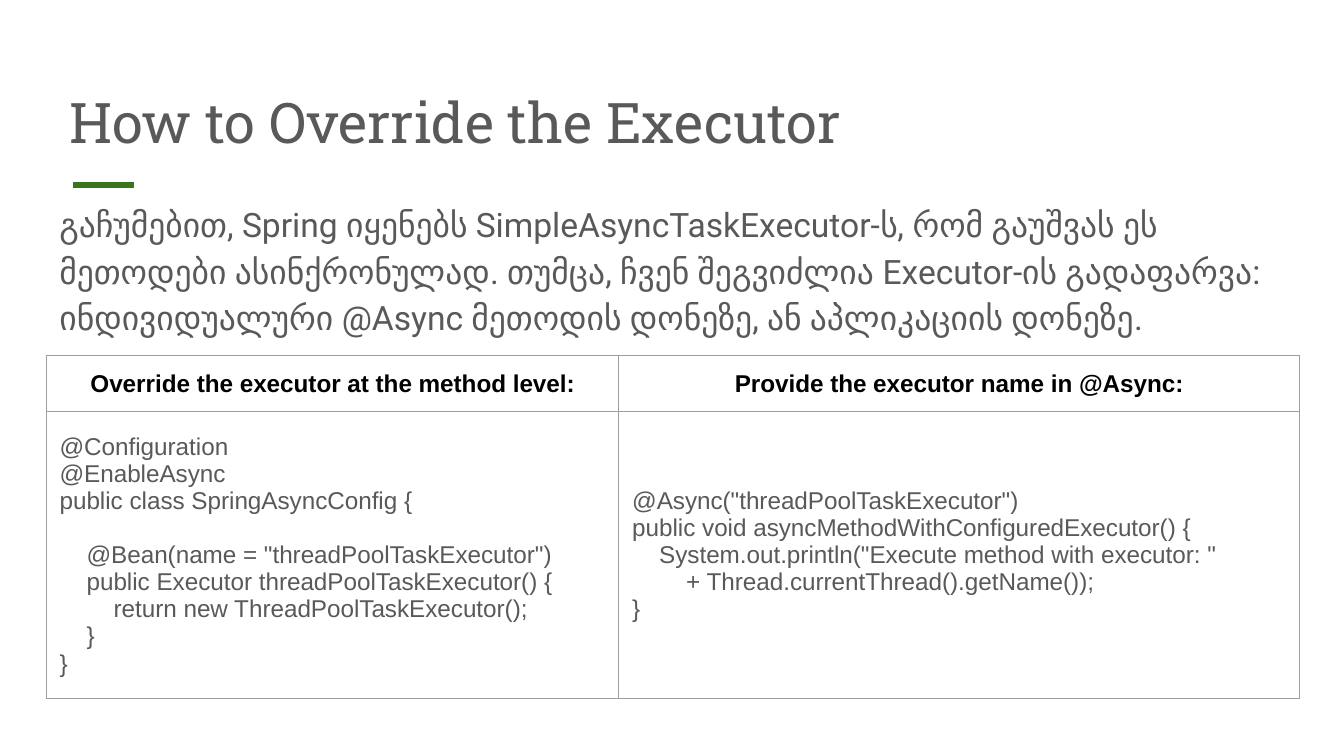
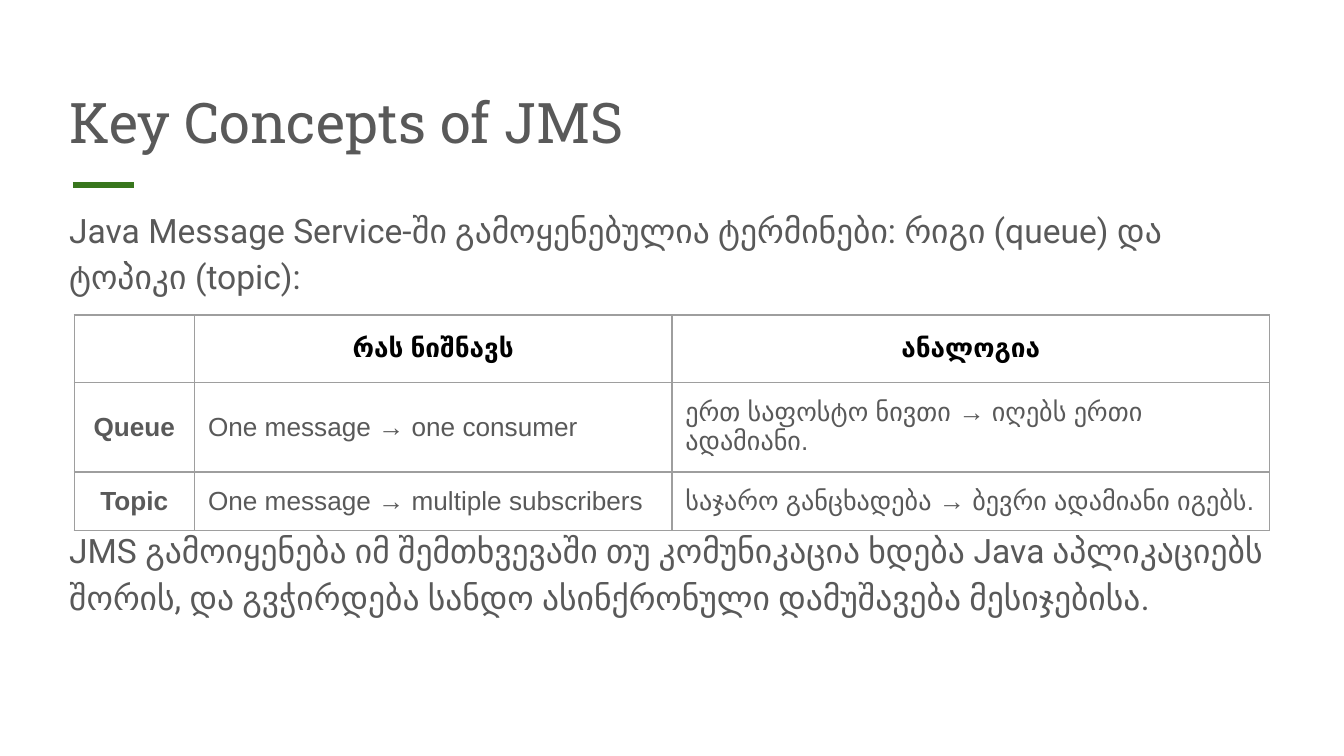
import pptx
import pptx.dml.color
import pptx.enum.shapes
import pptx.enum.text
import pptx.oxml
import pptx.oxml.ns
import pptx.util
import lxml.etree

PX = 9525  # 96 px to the inch
INSET = pptx.util.Inches(0.1)
GREY, BLACK, GREEN, BORDER = "595959", "000000", "38761D", "9E9E9E"
MIDDLE = pptx.enum.text.MSO_ANCHOR.MIDDLE
CENTER = pptx.enum.text.PP_ALIGN.CENTER
LEFT = pptx.enum.text.PP_ALIGN.LEFT


def rgb(value):
    return pptx.dml.color.RGBColor.from_string(value)


def write(frame, lines, font, size, color, bold=False, align=LEFT):
    """Leading spaces become an indent; an empty line becomes space before."""
    line_height = size * 1.115
    gap = 0
    para = frame.paragraphs[0]
    for line in lines:
        text = line.lstrip()
        if not text:
            gap += line_height
            continue
        if para.runs:
            para = frame.add_paragraph()
        para.text = text
        para.alignment = align
        para.space_before = pptx.util.Pt(gap)
        para.font.name = font
        para.font.size = pptx.util.Pt(size)
        para.font.bold = bold
        para.font.color.rgb = rgb(color)
        indent = len(line) - len(text)
        if indent:
            margin = pptx.util.Pt(indent * size * 0.278)  # width of a space
            properties = para._p.get_or_add_pPr()
            properties.set("marL", str(int(margin)))
            properties.set("indent", "0")
        gap = 0


config_code = """@Configuration
@EnableAsync
public class SpringAsyncConfig {

    @Bean(name = "threadPoolTaskExecutor")
    public Executor threadPoolTaskExecutor() {
        return new ThreadPoolTaskExecutor();
    }
}"""
async_code = """@Async("threadPoolTaskExecutor")
public void asyncMethodWithConfiguredExecutor() {
    System.out.println("Execute method with executor: "
        + Thread.currentThread().getName());
}"""

pages = [
    {
        "title": "How to Override the Executor",
        "body": [
            "გაჩუმებით, Spring იყენებს SimpleAsyncTaskExecutor-ს, რომ გაუშვას ეს "
            "მეთოდები ასინქრონულად. თუმცა, ჩვენ შეგვიძლია Executor-ის გადაფარვა: "
            "ინდივიდუალური @Async მეთოდის დონეზე, ან აპლიკაციის დონეზე.",
        ],
        "body_at": (33, 132, 895, 347),
        "table_at": (33, 254),
        "columns": [409, 486],
        "rows": [39, 193],
        "size": 13,
        "row_titles": False,
        "cells": [
            ["Override the executor at the method level:",
             "Provide the executor name in @Async:"],
            [config_code, async_code],
        ],
    },
    {
        "title": "Key Concepts of JMS",
        "body": [
            "Java Message Service-ში გამოყენებულია ტერმინები: რიგი (queue) და "
            "ტოპიკი (topic):",
            "JMS გამოიყენება იმ შემთხვევაში თუ კომუნიკაცია ხდება Java აპლიკაციებს "
            "შორის, და გვჭირდება სანდო ასინქრონული დამუშავება მესიჯებისა.",
        ],
        "body_at": (40, 136, 878, 343),
        "table_at": (53, 225),
        "columns": [86, 341, 427],
        "rows": [46, 61, 41],
        "size": 14,
        "row_titles": True,
        "cells": [
            ["", "რას ნიშნავს", "ანალოგია"],
            ["Queue", "One message → one consumer",
             "ერთ საფოსტო ნივთი → იღებს ერთი ადამიანი."],
            ["Topic", "One message → multiple subscribers",
             "საჯარო განცხადება → ბევრი ადამიანი იგებს."],
        ],
    },
]

deck = pptx.Presentation()
deck.slide_width, deck.slide_height = 960 * PX, 540 * PX

for page in pages:
    slide = deck.slides.add_slide(deck.slide_layouts[6])

    # Green rule under the title
    rule = slide.shapes.add_connector(
        pptx.enum.shapes.MSO_CONNECTOR.STRAIGHT, 52 * PX, 132 * PX, 96 * PX, 132 * PX)
    rule.line.color.rgb = rgb(GREEN)
    rule.line.width = pptx.util.Pt(3)
    lxml.etree.SubElement(rule._element.spPr, pptx.oxml.ns.qn("a:effectLst"))

    # Title and body text
    for place, lines, font, size in (
        ((40, 48, 878, 72), [page["title"]], "Roboto Slab", 30),
        (page["body_at"], page["body"], "Roboto", 18),
    ):
        box = slide.shapes.add_textbox(*[length * PX for length in place])
        frame = box.text_frame
        frame.word_wrap = True
        frame.margin_left = frame.margin_right = INSET
        frame.margin_top = frame.margin_bottom = INSET
        write(frame, lines, font, size, GREY)
        if size == 30:
            frame.vertical_anchor = pptx.enum.text.MSO_ANCHOR.BOTTOM
            continue
        for para in frame.paragraphs:
            para.line_spacing = 1.15
        if len(lines) > 1:
            frame.paragraphs[1].space_before = pptx.util.Pt(122)  # room for the table

    # Table
    left, top = page["table_at"]
    columns, rows = page["columns"], page["rows"]
    table = slide.shapes.add_table(
        len(rows), len(columns), left * PX, top * PX,
        sum(columns) * PX, sum(rows) * PX).table
    table.first_row = table.horz_banding = False
    for column, width in zip(table.columns, columns):
        column.width = width * PX
    for row, height in zip(table.rows, rows):
        row.height = height * PX

    for row_index, texts in enumerate(page["cells"]):
        for column_index, text in enumerate(texts):
            cell = table.cell(row_index, column_index)
            cell.margin_left = cell.margin_right = INSET
            cell.margin_top = cell.margin_bottom = INSET
            cell.vertical_anchor = MIDDLE
            header = row_index == 0
            heading = header or (page["row_titles"] and column_index == 0)
            write(cell.text_frame, text.split("\n"), "Arial", page["size"],
                  BLACK if header else GREY, heading, CENTER if heading else LEFT)
            # Borders come before the fill in the cell properties
            for side in ("lnL", "lnR", "lnT", "lnB"):
                cell._tc.get_or_add_tcPr().append(pptx.oxml.parse_xml(
                    f'<a:{side} {pptx.oxml.ns.nsdecls("a")} w="9525"><a:solidFill>'
                    f'<a:srgbClr val="{BORDER}"/></a:solidFill></a:{side}>'))
            cell.fill.background()

deck.save("out.pptx")
